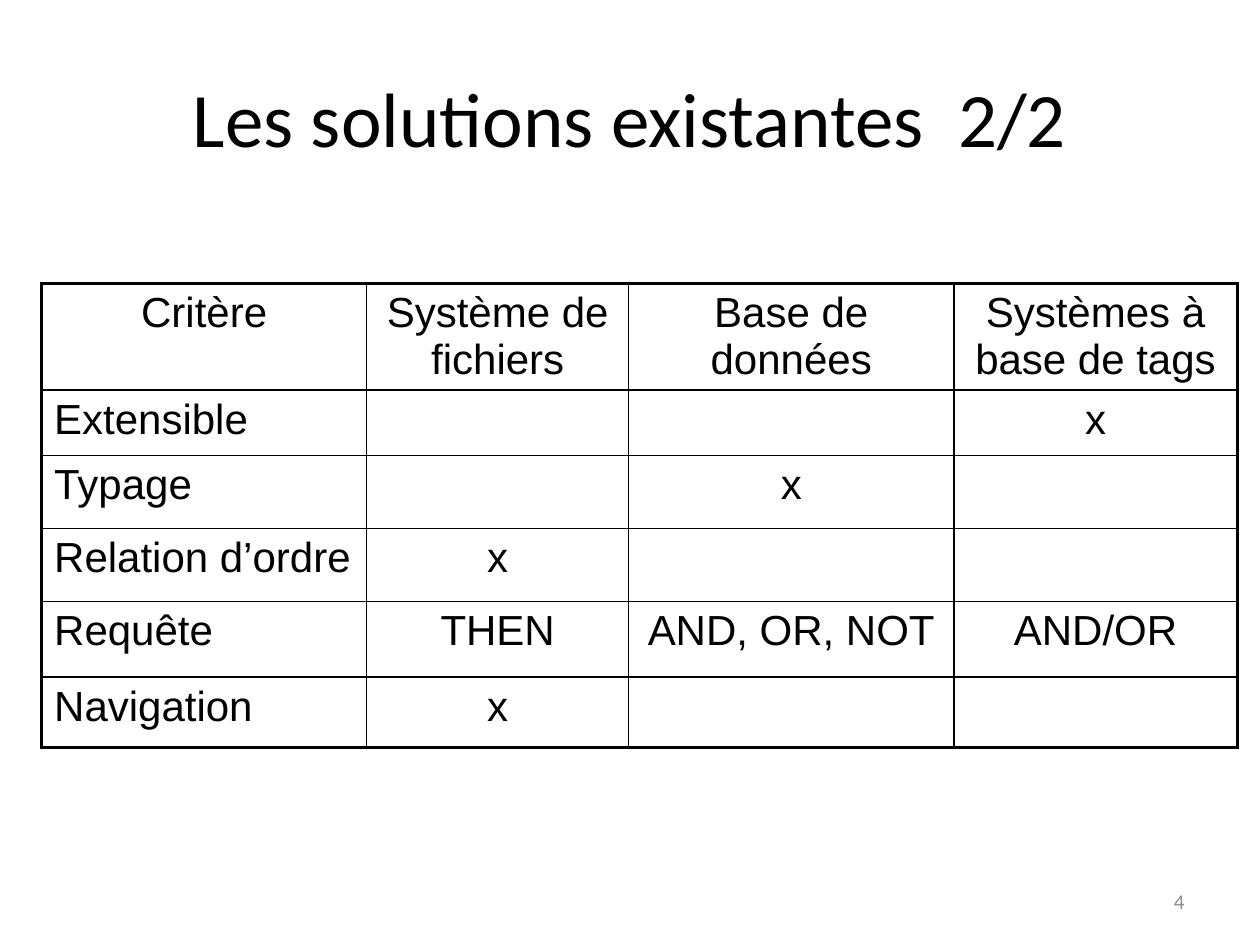
from lxml import etree
from pptx import Presentation
from pptx.dml.color import RGBColor
from pptx.enum.text import MSO_ANCHOR, PP_ALIGN
from pptx.oxml.ns import qn
from pptx.util import Inches, Pt

LEFT, CENTER, RIGHT = PP_ALIGN.LEFT, PP_ALIGN.CENTER, PP_ALIGN.RIGHT
MIDDLE = MSO_ANCHOR.MIDDLE
COLORS = {"ink": "000000", "muted": "8C8C8C"}
OUTER, INNER = Pt(2.25), Pt(1)


def write(frame, text, size=24, font="Arial", color="ink", align=CENTER):
    paragraph = frame.paragraphs[0]
    paragraph.alignment = align
    run = paragraph.add_run()
    run.text = text
    run.font.size = Pt(size)
    run.font.name = font
    run.font.color.rgb = RGBColor.from_string(COLORS[color])


def set_border(cell, side, width):
    line = etree.SubElement(cell._tc.get_or_add_tcPr(), qn(f"a:ln{side}"), w=str(width))
    fill = etree.SubElement(line, qn("a:solidFill"))
    etree.SubElement(fill, qn("a:srgbClr"), val=COLORS["ink"])


prs = Presentation()
prs.slide_width, prs.slide_height = Inches(10), Inches(7.5)
slide = prs.slides.add_slide(prs.slide_layouts[5])

title = slide.shapes.title
title.left, title.top = Inches(0.5), Inches(0.3)
title.width, title.height = Inches(9), Inches(1.25)
title.text_frame.vertical_anchor = MIDDLE
write(title.text_frame, "Les solutions existantes  2/2", size=44, font="Calibri")

criteria = [
    ["Critère", "Système de fichiers", "Base de données", "Systèmes à base de tags"],
    ["Extensible", "", "", "x"],
    ["Typage", "", "x", ""],
    ["Relation d’ordre", "x", "", ""],
    ["Requête", "THEN", "AND, OR, NOT", "AND/OR"],
    ["Navigation", "x", "", ""],
]
column_widths = [2.58, 2.08, 2.58, 2.25]
row_heights = [0.84, 0.52, 0.58, 0.58, 0.6, 0.56]
last_row, last_column = len(row_heights) - 1, len(column_widths) - 1

comparison = slide.shapes.add_table(
    len(row_heights), len(column_widths),
    Inches(0.33), Inches(2.25), Inches(9.5), Inches(3.75)).table
comparison.first_row = False
comparison.horz_banding = False
for column, width in zip(comparison.columns, column_widths):
    column.width = Inches(width)
for row, height in zip(comparison.rows, row_heights):
    row.height = Inches(height)

for r, entries in enumerate(criteria):
    for c, entry in enumerate(entries):
        cell = comparison.cell(r, c)
        on_edge = {"L": c == 0, "R": c == last_column, "T": r == 0, "B": r == last_row}
        for side, is_outer in on_edge.items():
            set_border(cell, side, OUTER if is_outer else INNER)
        cell.fill.background()
        if entry:
            write(cell.text_frame, entry, align=LEFT if c == 0 and r > 0 else CENTER)

page_number = slide.shapes.add_textbox(Inches(7.17), Inches(6.95), Inches(2.33), Inches(0.4))
page_number.text_frame.word_wrap = True
page_number.text_frame.vertical_anchor = MIDDLE
write(page_number.text_frame, "4", size=12, font="Calibri", color="muted", align=RIGHT)

prs.save("out.pptx")
